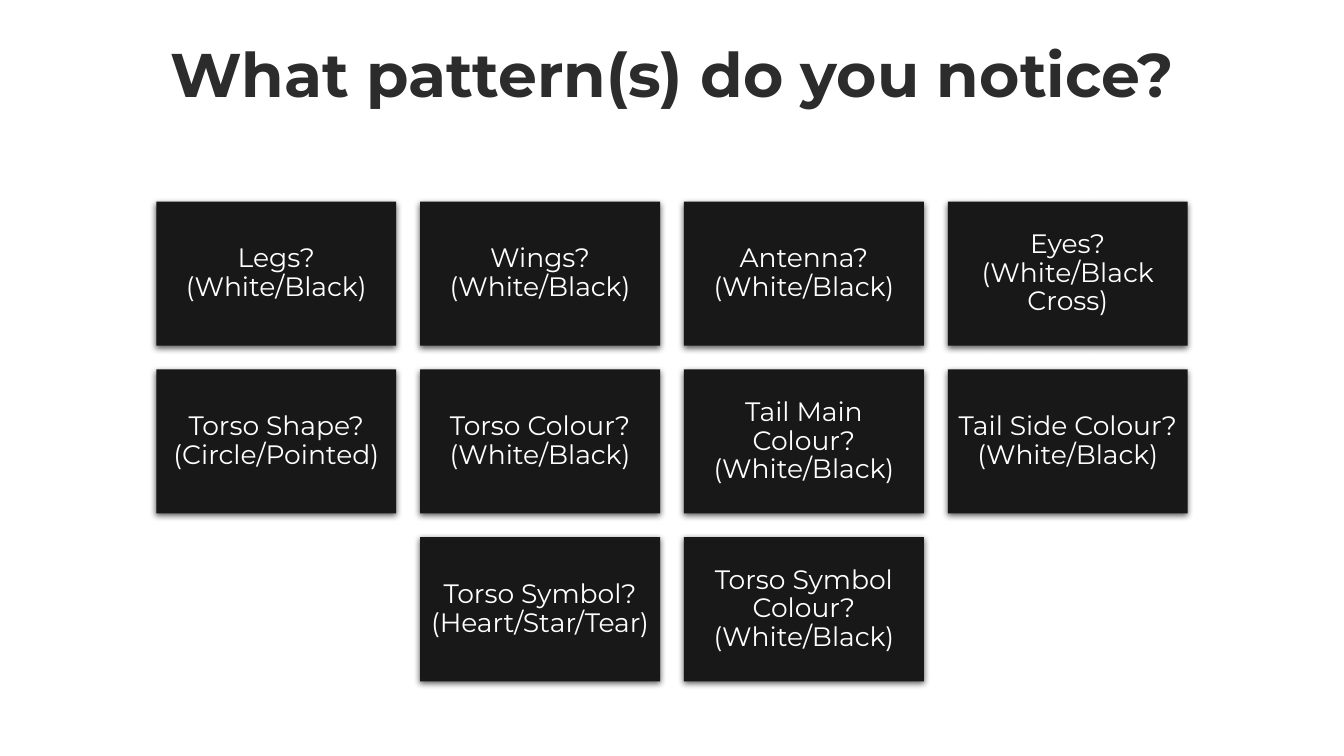
from dataclasses import dataclass

from lxml.etree import SubElement as Sub
from pptx import Presentation
from pptx.dml.color import RGBColor as Rgb
from pptx.enum.shapes import MSO_SHAPE as Shape
from pptx.enum.text import MSO_ANCHOR as Anchor, MSO_AUTO_SIZE as Fit, PP_ALIGN as Align
from pptx.oxml.ns import qn
from pptx.util import Inches, Pt


@dataclass(frozen=True)
class Theme:
    face: str = "Montserrat"
    ink: str = "2C2C2C"
    card: str = "181818"
    light: str = "FFFFFF"
    shade: str = "000000"
    head: int = 44
    text: int = 19


THEME = Theme()

ROWS = [
    ["Legs? (White/Black)", "Wings? (White/Black)",
     "Antenna? (White/Black)", "Eyes? (White/Black Cross)"],
    ["Torso Shape? (Circle/Pointed)", "Torso Colour? (White/Black)",
     "Tail Main Colour? (White/Black)", "Tail Side Colour? (White/Black)"],
    ["Torso Symbol? (Heart/Star/Tear)", "Torso Symbol Colour? (White/Black)"],
]


def write(frame, text, size, color, anchor, bold=False):
    frame.word_wrap = True
    frame.auto_size = Fit.NONE
    frame.vertical_anchor = anchor
    frame.text = text
    para = frame.paragraphs[0]
    para.alignment = Align.CENTER
    para.line_spacing = 0.9
    font = para.font
    font.name = THEME.face
    font.size = Pt(size)
    font.bold = bold
    font.color.rgb = Rgb.from_string(color)


def add_shade(shape):
    shape.shadow.inherit = False
    effects = shape._element.spPr.find(qn("a:effectLst"))
    outer = Sub(effects, qn("a:outerShdw"), blurRad=str(Pt(4.5)), dist=str(Pt(1.5)),
                dir="5400000", algn="ctr", rotWithShape="0")
    color = Sub(outer, qn("a:srgbClr"), val=THEME.shade)
    Sub(color, qn("a:alpha"), val="63000")


def add_title(slide, text, left, top, width, height):
    title = slide.shapes.title
    title.left, title.top = Inches(left), Inches(top)
    title.width, title.height = Inches(width), Inches(height)
    write(title.text_frame, text, THEME.head, THEME.ink, Anchor.TOP, bold=True)


def add_card(slide, text, left, top, width, height):
    card = slide.shapes.add_shape(
        Shape.RECTANGLE, Inches(left), Inches(top), Inches(width), Inches(height))
    card.fill.solid()
    card.fill.fore_color.rgb = Rgb.from_string(THEME.card)
    card.line.fill.background()
    add_shade(card)
    frame = card.text_frame
    frame.margin_left = frame.margin_right = Inches(0.08)
    frame.margin_top = frame.margin_bottom = Inches(0.08)
    write(frame, text, THEME.text, THEME.light, Anchor.MIDDLE)


def add_grid(slide, rows, left, top, width, height):
    # Equal gaps; a short row is centred in the box
    wide, tall = 2.38, 1.43
    most = max(len(row) for row in rows)
    step_x = (width - wide) / (most - 1)
    step_y = (height - tall) / (len(rows) - 1)
    for r, row in enumerate(rows):
        start = left + (most - len(row)) * step_x / 2
        for c, text in enumerate(row):
            add_card(slide, text, start + c * step_x, top + r * step_y, wide, tall)


def main():
    deck = Presentation()
    deck.slide_width, deck.slide_height = Inches(13.33), Inches(7.5)
    slide = deck.slides.add_slide(deck.slide_layouts[5])
    # Heading
    add_title(slide, "What pattern(s) do you notice?", 0.92, 0.39, 11.5, 1.45)
    # Question cards
    add_grid(slide, ROWS, 1.55, 2, 10.23, 4.76)
    deck.save("out.pptx")


if __name__ == "__main__":
    main()
